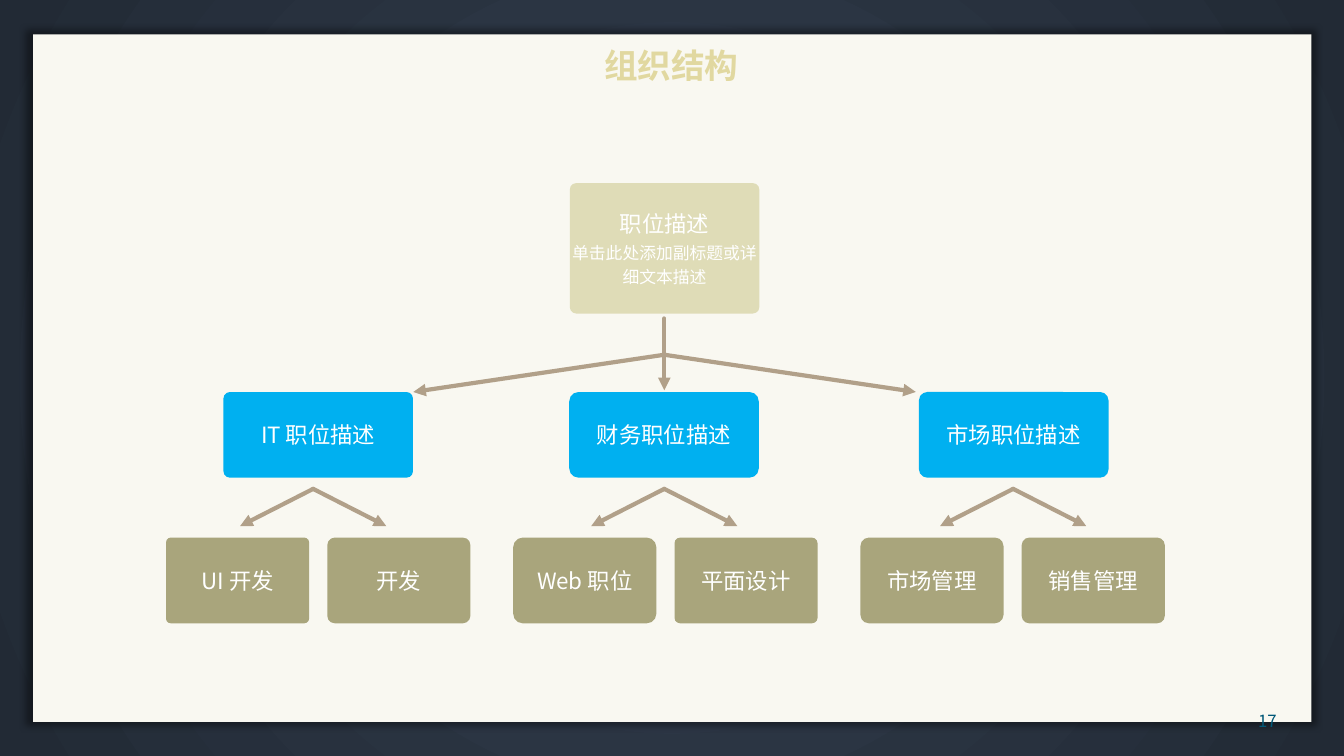
import pptx
import pptx.util
import pptx.dml.color
import pptx.enum.shapes
import pptx.enum.text
import pptx.oxml
import pptx.oxml.ns
from lxml import etree

Pt = pptx.util.Pt
qn = pptx.oxml.ns.qn
RECT = pptx.enum.shapes.MSO_SHAPE.RECTANGLE
ROUNDED = pptx.enum.shapes.MSO_SHAPE.ROUNDED_RECTANGLE
STRAIGHT = pptx.enum.shapes.MSO_CONNECTOR.STRAIGHT
MIDDLE = pptx.enum.text.MSO_ANCHOR.MIDDLE
ALIGN = pptx.enum.text.PP_ALIGN
FONT = "Noto Sans CJK SC"
rgb = pptx.dml.color.RGBColor.from_string

deck = pptx.Presentation()
deck.slide_width, deck.slide_height = Pt(960), Pt(540)
slide = deck.slides.add_slide(deck.slide_layouts[6])
shapes = slide.shapes


def write(shape, lines, align=ALIGN.CENTER):
    """Fill a shape with (text, size, colour) paragraphs, centred vertically."""
    frame = shape.text_frame
    frame.word_wrap = True
    frame.vertical_anchor = MIDDLE
    frame.margin_left = frame.margin_right = frame.margin_top = frame.margin_bottom = 0
    frame.text = "\n".join(text for text, _, _ in lines)
    for paragraph, (_, size, color) in zip(frame.paragraphs, lines):
        paragraph.alignment = align
        font = paragraph.runs[0].font
        font.size, font.name = Pt(size), FONT
        font.color.rgb = rgb(color)
        latin = paragraph.runs[0]._r.rPr.find(qn("a:latin"))
        east_asian = etree.Element(qn("a:ea"), typeface=FONT)
        latin.addnext(east_asian)
    return frame


def add_box(kind, left, top, width, height, color):
    box = shapes.add_shape(kind, Pt(left), Pt(top), Pt(width), Pt(height))
    box.shadow.inherit = False
    box.fill.solid()
    box.fill.fore_color.rgb = rgb(color)
    box.line.fill.background()
    return box


# Background: radial gradient
backdrop = slide.background.fill
backdrop.gradient()
for stop, color, position in zip(backdrop.gradient_stops, ("333F50", "222A35"), (0, 1)):
    stop.color.rgb = rgb(color)
    stop.position = position
gradient = slide.element.find(".//" + qn("a:gradFill"))
gradient.remove(gradient.find(qn("a:lin")))
radial = etree.SubElement(gradient, qn("a:path"), path="circle")
etree.SubElement(radial, qn("a:fillToRect"), l="50000", t="50000", r="50000", b="50000")

# Paper panel with a soft shadow
panel = add_box(RECT, 23.7, 24.6, 913, 491, "F9F8F1")
effects = panel.element.spPr.find(qn("a:effectLst"))
shadow = etree.SubElement(effects, qn("a:outerShdw"), blurRad=str(Pt(5)), sx="101000",
                          sy="101000", algn="ctr", rotWithShape="0")
shade = etree.SubElement(shadow, qn("a:srgbClr"), val="000000")
etree.SubElement(shade, qn("a:alpha"), val="40000")

# Arrows: (x1, y1, x2, y2, has head)
center = 474.5
arrows = [
    (center, 253.4, center, 278.8, True),
    (center, 253.4, 295.2, 280, True),
    (center, 253.4, 654.2, 280, True),
    (center, 227.5, center, 253.4, False),
]
for fork in (223.7, center, 723.7):
    arrows += [(fork, 349.2, fork + side * 52.2, 375.8, True) for side in (-1, 1)]
for x1, y1, x2, y2, has_head in arrows:
    arrow = shapes.add_connector(STRAIGHT, Pt(x1), Pt(y1), Pt(x2), Pt(y2))
    arrow.line.color.rgb = rgb("B1A089")
    arrow.line.width = Pt(3)
    outline = arrow.line._get_or_add_ln()
    outline.set("cap", "rnd")
    if has_head:
        etree.SubElement(outline, qn("a:tailEnd"), type="triangle")
    etree.SubElement(arrow.element.spPr, qn("a:effectLst"))

# Top position
top_position = add_box(ROUNDED, 407, 130.8, 135.4, 93.2, "DFDCB7")
top_position.adjustments[0] = 0.05
top_text = write(top_position, [
    ("职位描述", 16, "FFFFFF"),
    ("单击此处添加副标题或详细文本描述", 12, "FFFFFF"),
])
top_text.paragraphs[1].line_spacing = 1.2
top_text.paragraphs[1].space_before = Pt(1)

# Departments, each with two teams: (left, name, corner, teams)
departments = [
    (159.6, "IT 职位描述", 0.076, [("UI 开发", 0.055), ("开发", 0.087)]),
    (406.6, "财务职位描述", 0.109, [("Web 职位", 0.109), ("平面设计", 0.065)]),
    (656.4, "市场职位描述", 0.098, [("市场管理", 0.098), ("销售管理", 0.087)]),
]
for column, (left, name, corner, teams) in enumerate(departments):
    department = add_box(ROUNDED, left, 280, 135.4, 61.2, "00B0F0")
    department.adjustments[0] = corner
    write(department, [(name, 16, "FFFFFF")])
    for place, (team_name, team_corner) in enumerate(teams):
        team_left = 118.6 + 248 * column + 115.2 * place
        team = add_box(ROUNDED, team_left, 384, 102.2, 61.2, "A9A57C")
        team.adjustments[0] = team_corner
        write(team, [(team_name, 16, "FFFFFF")])

# Page number and title
page_number = shapes.add_textbox(Pt(882), Pt(500.4), Pt(30), Pt(28.8))
write(page_number, [("17", 12, "005878")], ALIGN.RIGHT)
title = shapes.add_textbox(Pt(40.3), Pt(28.8), Pt(878.4), Pt(36))
write(title, [("组织结构", 24, "E1D8A0")]).paragraphs[0].runs[0].font.bold = True

deck.save("out.pptx")
